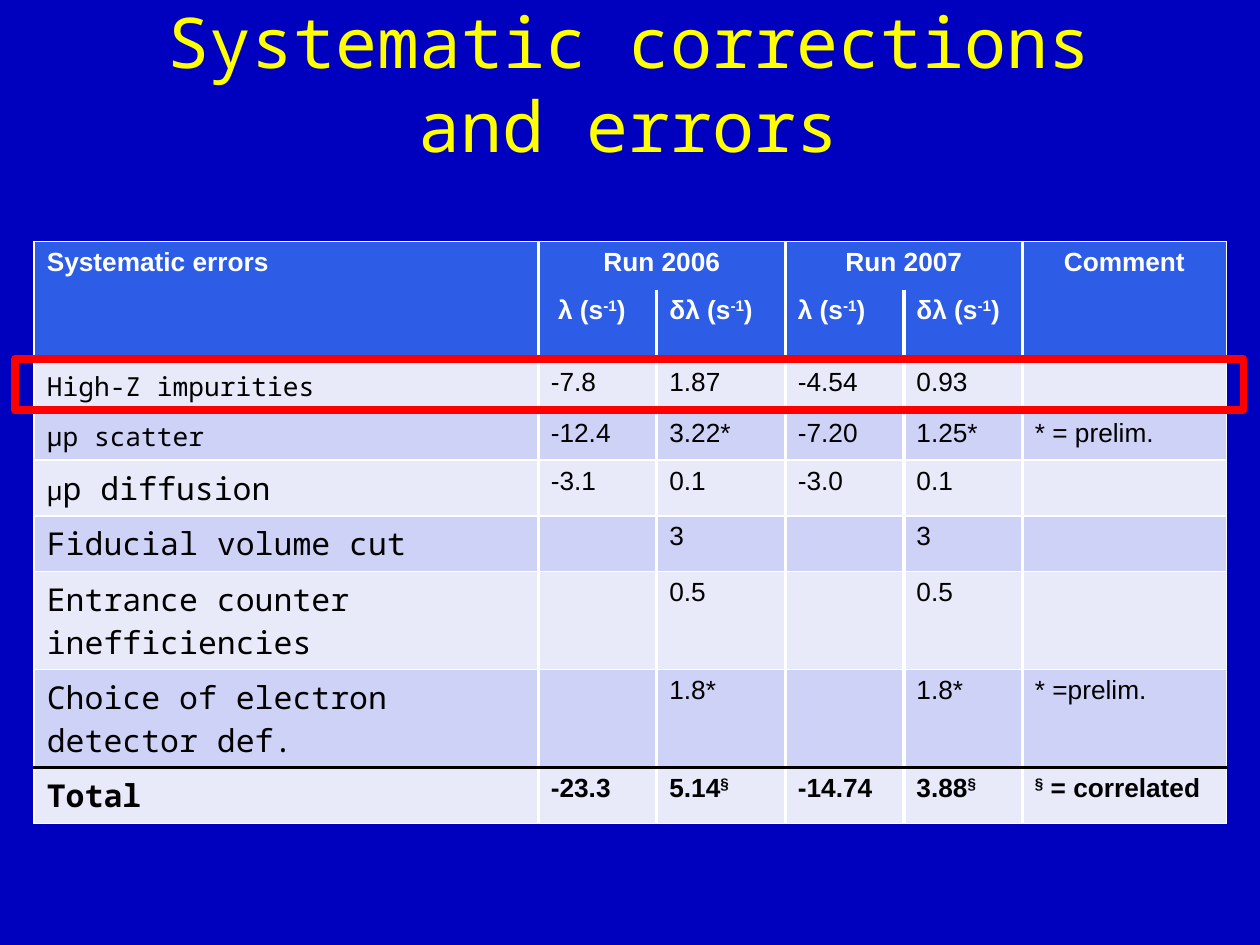
"""Build a slide with a table of systematic corrections and errors."""
from lxml.etree import SubElement
from pptx import Presentation
from pptx.dml.color import RGBColor
from pptx.enum.shapes import MSO_SHAPE as Shape
from pptx.enum.text import MSO_ANCHOR as Anchor, PP_ALIGN as Align
from pptx.oxml.ns import qn
from pptx.util import Cm, Pt

NAVY = RGBColor(0x00, 0x00, 0xBF)
YELLOW = RGBColor(0xFF, 0xFF, 0x00)
WHITE = RGBColor(0xFF, 0xFF, 0xFF)
BLACK = RGBColor(0x00, 0x00, 0x00)
RED = RGBColor(0xFF, 0x00, 0x00)
HEADER_BLUE = RGBColor(0x2D, 0x5C, 0xE7)
BANDS = (RGBColor(0xE8, 0xEA, 0xFA), RGBColor(0xCD, 0xD2, 0xF6))

SANS, MONO = "Arial", "Noto Sans Mono"
SMALL, LARGE = Pt(15), Pt(18)
THIN, THICK = Pt(1), Pt(2.25)
HEADER_ROWS = 2
COLUMN_WIDTHS = (10.16, 2.39, 2.59, 2.39, 2.39, 4.11)
ROW_HEIGHTS = (0.97, 1.45, 0.95, 0.97, 1.12, 1.12, 1.98, 1.98, 1.12)
MERGES = (((0, 0), (1, 0)), ((0, 1), (0, 2)), ((0, 3), (0, 4)), ((0, 5), (1, 5)))

HEADERS = (
    ("Systematic errors", "Run 2006", "", "Run 2007", "", "Comment"),
    ("", " λ (s^-1^)", "δλ (s^-1^)", "λ (s^-1^)", "δλ (s^-1^)", ""),
)
LABELS = (
    (("High-Z impurities", SMALL),),
    (("μp scatter", SMALL),),
    (("μ", SMALL), ("p diffusion", LARGE)),
    (("Fiducial volume cut", LARGE),),
    (("Entrance counter inefficiencies", LARGE),),
    (("Choice of electron detector def.", LARGE),),
    (("Total", LARGE),),
)
VALUES = (
    ("-7.8", "1.87", "-4.54", "0.93", ""),
    ("-12.4", "3.22*", "-7.20", "1.25*", "* = prelim."),
    ("-3.1", "0.1", "-3.0", "0.1", ""),
    ("", "3", "", "3", ""),
    ("", "0.5", "", "0.5", ""),
    ("", "1.8*", "", "1.8*", "* =prelim."),
    ("-23.3", "5.14^§^", "-14.74", "3.88^§^", "^§^ = correlated"),
)


def add_text(paragraph, text, color, **font_values):
    """Add runs to a paragraph, raising the parts between carets."""
    for index, part in enumerate(text.split("^")):
        if not part:
            continue
        run = paragraph.add_run()
        run.text = part
        for name, value in font_values.items():
            setattr(run.font, name, value)
        run.font.color.rgb = color
        if index % 2:
            run.font._element.set("baseline", "30000")


def add_title(slide, text):
    """Add the centred slide title."""
    frame = slide.shapes.add_textbox(Cm(1.88), Cm(0.08), Cm(21.59), Cm(3.18)).text_frame
    frame.word_wrap = True
    frame.vertical_anchor = Anchor.MIDDLE
    paragraph = frame.paragraphs[0]
    paragraph.alignment = Align.CENTER
    add_text(paragraph, text, YELLOW, name=MONO, size=Pt(40))


def set_border(cell, side, width, color):
    """Draw one cell border, or none when the colour is None."""
    properties = cell._tc.get_or_add_tcPr()
    line = SubElement(properties, qn(f"a:ln{side}"), w=str(int(width)))
    if color is None:
        SubElement(line, qn("a:noFill"))
    else:
        fill = SubElement(line, qn("a:solidFill"))
        SubElement(fill, qn("a:srgbClr"), val=str(color))


def horizontal_border(edge):
    """Return width and colour of the line above the row with this index."""
    if edge == 1:
        return THIN, None
    if edge == HEADER_ROWS:
        return THICK, WHITE
    if edge == len(ROW_HEIGHTS) - 1:
        return THICK, BLACK
    return THIN, WHITE


def vertical_border(edge):
    """Return width and colour of the line left of the column with this index."""
    return (THIN if edge in (0, len(COLUMN_WIDTHS)) else THICK), WHITE


def style_cell(cell, row, column):
    """Give a cell its borders and fill."""
    set_border(cell, "L", *vertical_border(column))
    set_border(cell, "R", *vertical_border(column + 1))
    set_border(cell, "T", *horizontal_border(row))
    set_border(cell, "B", *horizontal_border(row + 1))
    cell.fill.solid()
    cell.fill.fore_color.rgb = HEADER_BLUE if row < HEADER_ROWS else BANDS[row % 2]


def fill_table(table):
    """Write the header, label and value cells."""
    for row, texts in enumerate(HEADERS):
        for column, text in enumerate(texts):
            paragraph = table.cell(row, column).text_frame.paragraphs[0]
            if row == 0 and column > 0:
                paragraph.alignment = Align.CENTER
            add_text(paragraph, text, WHITE, name=SANS, size=SMALL, bold=True)
    for row, (label, values) in enumerate(zip(LABELS, VALUES), HEADER_ROWS):
        bold = row == len(ROW_HEIGHTS) - 1
        for text, size in label:
            paragraph = table.cell(row, 0).text_frame.paragraphs[0]
            add_text(paragraph, text, BLACK, name=MONO, size=size, bold=bold)
        for column, text in enumerate(values, 1):
            paragraph = table.cell(row, column).text_frame.paragraphs[0]
            add_text(paragraph, text, BLACK, name=SANS, size=SMALL, bold=bold)


def add_error_table(slide):
    """Add the table of corrections and errors for both runs."""
    table = slide.shapes.add_table(
        len(ROW_HEIGHTS), len(COLUMN_WIDTHS), Cm(0.69), Cm(4.87),
        Cm(sum(COLUMN_WIDTHS)), Cm(sum(ROW_HEIGHTS))).table
    for column, width in zip(table.columns, COLUMN_WIDTHS):
        column.width = Cm(width)
    for row, height in zip(table.rows, ROW_HEIGHTS):
        row.height = Cm(height)
    for row in range(len(ROW_HEIGHTS)):
        for column in range(len(COLUMN_WIDTHS)):
            style_cell(table.cell(row, column), row, column)
    for first, last in MERGES:
        table.cell(*first).merge(table.cell(*last))
    fill_table(table)


def add_highlight(slide):
    """Add the red frame around the impurities row."""
    shape = slide.shapes.add_shape(
        Shape.RECTANGLE, Cm(0.3), Cm(7.24), Cm(24.77), Cm(1.02))
    shape.shadow.inherit = False
    shape.fill.background()
    shape.line.color.rgb = RED
    shape.line.width = Pt(4.5)
    SubElement(shape.line._get_or_add_ln(), qn("a:round"))


def main():
    """Build and save the presentation."""
    presentation = Presentation()
    presentation.slide_width, presentation.slide_height = Cm(25.4), Cm(19.05)
    slide = presentation.slides.add_slide(presentation.slide_layouts[6])
    slide.background.fill.solid()
    slide.background.fill.fore_color.rgb = NAVY
    add_title(slide, "Systematic corrections and errors")
    add_error_table(slide)
    add_highlight(slide)
    presentation.save("out.pptx")


if __name__ == "__main__":
    main()
